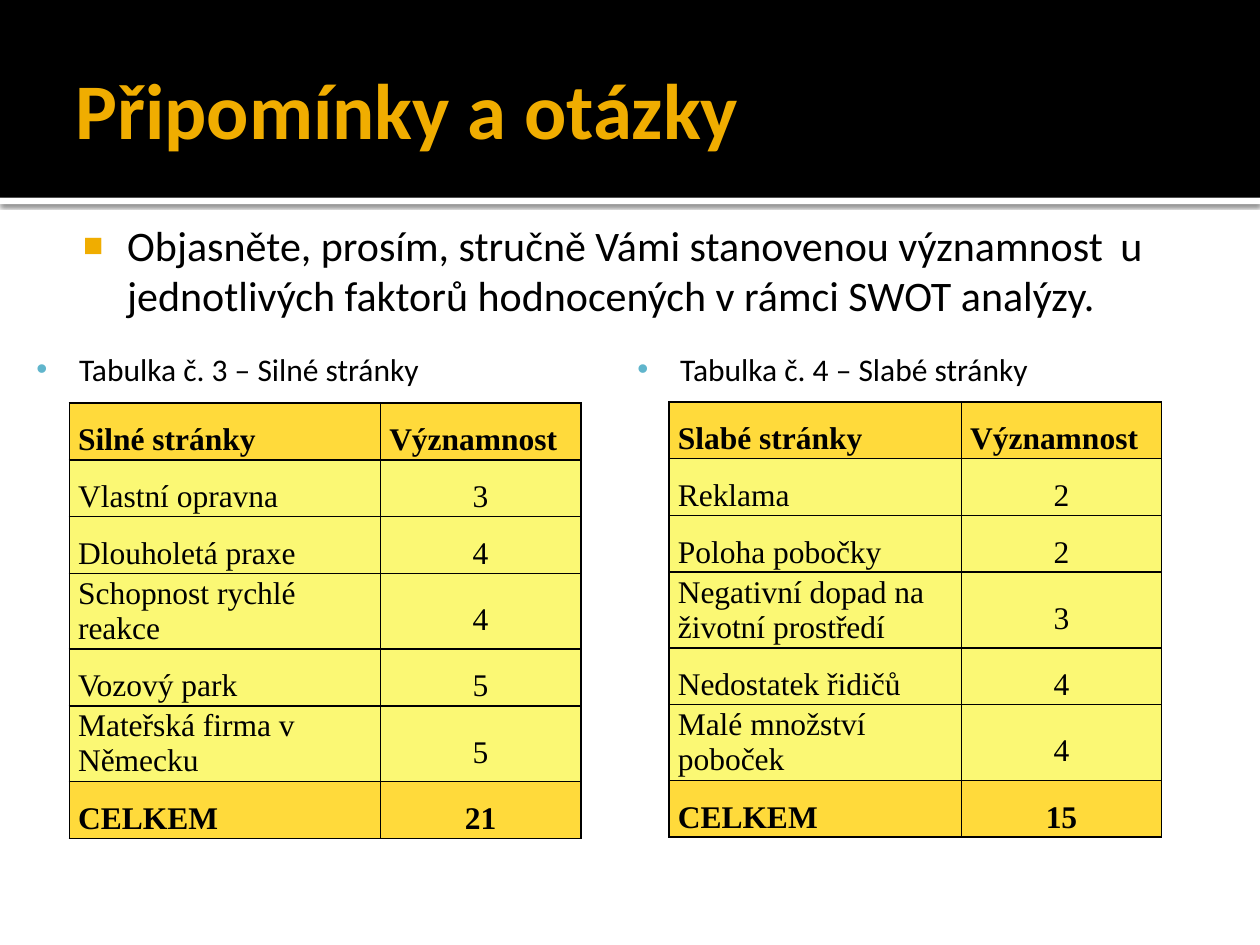
from dataclasses import dataclass

from lxml import etree
from pptx import Presentation
from pptx.dml.color import RGBColor
from pptx.enum.shapes import MSO_SHAPE
from pptx.enum.text import MSO_ANCHOR, MSO_AUTO_SIZE, PP_ALIGN
from pptx.oxml import parse_xml
from pptx.oxml.ns import nsdecls, qn
from pptx.util import Inches, Pt

BLACK = RGBColor(0x00, 0x00, 0x00)
WHITE = RGBColor(0xFF, 0xFF, 0xFF)
ORANGE = RGBColor(0xF0, 0xAD, 0x00)
BLUE = RGBColor(0x60, 0xB5, 0xCC)
GOLD = RGBColor(0xFF, 0xDA, 0x3B)
YELLOW = RGBColor(0xFB, 0xF8, 0x74)
MIDDLE = MSO_ANCHOR.MIDDLE
LEFT = PP_ALIGN.LEFT
CENTER = PP_ALIGN.CENTER
RECTANGLE = MSO_SHAPE.RECTANGLE
NO_AUTOFIT = MSO_AUTO_SIZE.NONE

TITLE_ONLY_LAYOUT = 5
SINGLE_ROW, DOUBLE_ROW = 0.41, 0.55
TITLE_FORMAT = {"name": "Calibri", "size": Pt(45), "bold": True}
BODY_FORMAT = {"name": "Calibri", "size": Pt(24)}
CAPTION_FORMAT = {"name": "Calibri", "size": Pt(18)}
CELL_FORMAT = {"name": "Times New Roman", "size": Pt(18)}


@dataclass
class Bullet:
    character: str
    color: RGBColor
    percent: int
    margin: float
    indent: float
    tabs: tuple = ()


@dataclass
class FactorTable:
    caption: str
    caption_left: float
    left: float
    top: float
    widths: tuple
    heading: str
    factors: list
    two_line_rows: tuple

    def rows(self) -> list:
        total = sum(weight for _, weight in self.factors)
        return [(self.heading, "Významnost"), *self.factors, ("CELKEM", total)]


TABLES = [
    FactorTable(
        "Tabulka č. 3 – Silné stránky", -0.08, 0.55, 3.2, (2.47, 1.59), "Silné stránky",
        [("Vlastní opravna", 3), ("Dlouholetá praxe", 4), ("Schopnost rychlé reakce", 4),
         ("Vozový park", 5), ("Mateřská firma v Německu", 5)], (3, 5)),
    FactorTable(
        "Tabulka č. 4 – Slabé stránky", 4.69, 5.31, 3.19, (2.32, 1.59), "Slabé stránky",
        [("Reklama", 2), ("Poloha pobočky", 2), ("Negativní dopad na životní prostředí", 3),
         ("Nedostatek řidičů", 4), ("Malé množství poboček", 4)], (3, 5)),
]
BODY_BULLET = Bullet("■", ORANGE, 80, 0.48, -0.35, (8.12, 8.6))
CAPTION_BULLET = Bullet("•", BLUE, 100, 0.61, -0.34)


def format_font(font, values: dict, color: RGBColor = BLACK) -> None:
    for name, value in values.items():
        setattr(font, name, value)
    font.color.rgb = color


def set_margins(target, left: float, top: float, right: float, bottom: float) -> None:
    for side, value in zip(("left", "top", "right", "bottom"), (left, top, right, bottom)):
        setattr(target, f"margin_{side}", Inches(value))


def add_bar(slide, top: float, height: float, color: RGBColor):
    bar = slide.shapes.add_shape(RECTANGLE, 0, Inches(top), Inches(10), Inches(height))
    bar.shadow.inherit = False
    bar.fill.solid()
    bar.fill.fore_color.rgb = color
    bar.line.fill.background()
    return bar


def add_header(slide) -> None:
    """Place the bars behind the title, with a soft shadow under the white one."""
    strip = add_bar(slide, 1.57, 0.05, WHITE)
    effects = strip._element.spPr.find(qn("a:effectLst"))
    effects.append(parse_xml(
        f'<a:outerShdw {nsdecls("a")} blurRad="{Pt(2.5)}" dist="{Pt(0.8)}" dir="5400000">'
        '<a:srgbClr val="000000"><a:alpha val="60000"/></a:srgbClr></a:outerShdw>'))
    band = add_bar(slide, 0, 1.57, BLACK)
    title = slide.shapes.title
    for bar in (strip, band):
        title._element.addprevious(bar._element)
    title.left, title.top, title.width, title.height = map(Inches, (0.5, 0.17, 9, 1.37))
    frame = title.text_frame
    frame.text = "Připomínky a otázky"
    frame.auto_size = NO_AUTOFIT
    frame.vertical_anchor = MIDDLE
    set_margins(frame, 0.1, 0.05, 0.05, 0.05)
    frame.paragraphs[0].alignment = LEFT
    format_font(frame.paragraphs[0].runs[0].font, TITLE_FORMAT, ORANGE)


def apply_bullet(paragraph, bullet: Bullet) -> None:
    properties = paragraph._p.get_or_add_pPr()
    properties.set("marL", str(Inches(bullet.margin)))
    properties.set("indent", str(Inches(bullet.indent)))
    color = etree.SubElement(properties, qn("a:buClr"))
    etree.SubElement(color, qn("a:srgbClr"), val=str(bullet.color))
    etree.SubElement(properties, qn("a:buSzPct"), val=str(bullet.percent * 1000))
    etree.SubElement(properties, qn("a:buFont"), typeface="Arial")
    etree.SubElement(properties, qn("a:buChar"), char=bullet.character)
    if bullet.tabs:
        stops = etree.SubElement(properties, qn("a:tabLst"))
        for position in bullet.tabs:
            etree.SubElement(stops, qn("a:tab"), pos=str(Inches(position)), algn="l")


def add_bullet_text(slide, box: tuple, margins: tuple, text: str,
                    bullet: Bullet, values: dict) -> None:
    frame = slide.shapes.add_textbox(*map(Inches, box)).text_frame
    frame.word_wrap = True
    set_margins(frame, *margins)
    paragraph = frame.paragraphs[0]
    apply_bullet(paragraph, bullet)
    run = paragraph.add_run()
    run.text = text
    format_font(run.font, values)


def add_borders(cell) -> None:
    properties = cell._tc.get_or_add_tcPr()
    for position, side in enumerate(("lnL", "lnR", "lnT", "lnB")):
        properties.insert(position, parse_xml(
            f'<a:{side} {nsdecls("a")} w="{Pt(1)}"><a:solidFill>'
            f'<a:srgbClr val="{BLACK}"/></a:solidFill></a:{side}>'))


def fill_cell(cell, text: str, emphasized: bool, alignment, spacing: float) -> None:
    cell.fill.solid()
    cell.fill.fore_color.rgb = GOLD if emphasized else YELLOW
    cell.vertical_anchor = MIDDLE
    set_margins(cell, 0.07, 0, 0.07, 0)
    add_borders(cell)
    paragraph = cell.text_frame.paragraphs[0]
    paragraph.alignment = alignment
    paragraph.line_spacing = spacing
    run = paragraph.add_run()
    run.text = text
    format_font(run.font, {**CELL_FORMAT, "bold": emphasized})


def add_factor_table(slide, data: FactorTable) -> None:
    rows = data.rows()
    heights = [DOUBLE_ROW if index in data.two_line_rows else SINGLE_ROW
               for index in range(len(rows))]
    box = (data.left, data.top, sum(data.widths), sum(heights))
    table = slide.shapes.add_table(len(rows), 2, *map(Inches, box)).table
    for column, width in zip(table.columns, data.widths):
        column.width = Inches(width)
    for index, (factor, weight) in enumerate(rows):
        table.rows[index].height = Inches(heights[index])
        emphasized = index in (0, len(rows) - 1)
        spacing = 1.0 if index in data.two_line_rows else 1.5
        fill_cell(table.cell(index, 0), factor, emphasized, LEFT, spacing)
        fill_cell(table.cell(index, 1), str(weight), emphasized, CENTER if index else LEFT, 1.5)


def main() -> None:
    presentation = Presentation()
    presentation.slide_width, presentation.slide_height = Inches(10), Inches(7.5)
    slide = presentation.slides.add_slide(presentation.slide_layouts[TITLE_ONLY_LAYOUT])
    add_header(slide)
    add_bullet_text(
        slide, (0.47, 1.64, 9, 5.06), (0.06, 0.1, 0.1, 0.05),
        "Objasněte, prosím, stručně Vámi stanovenou významnost\tu jednotlivých faktorů "
        "hodnocených v rámci SWOT analýzy.", BODY_BULLET, BODY_FORMAT)
    for data in TABLES:
        add_factor_table(slide, data)
        add_bullet_text(slide, (data.caption_left, 2.73, 3.83, 0.4), (0.1, 0.05, 0.1, 0.05),
                        data.caption, CAPTION_BULLET, CAPTION_FORMAT)
    presentation.save("out.pptx")


if __name__ == "__main__":
    main()
